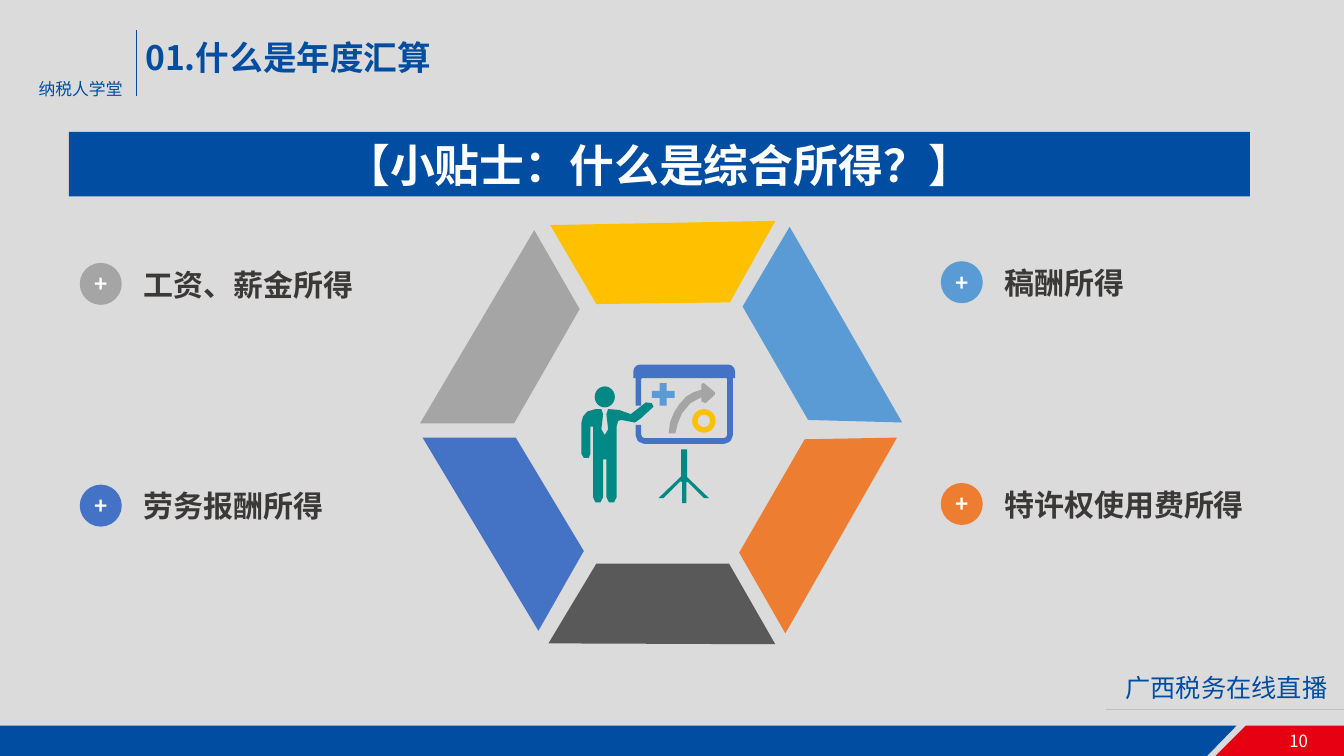
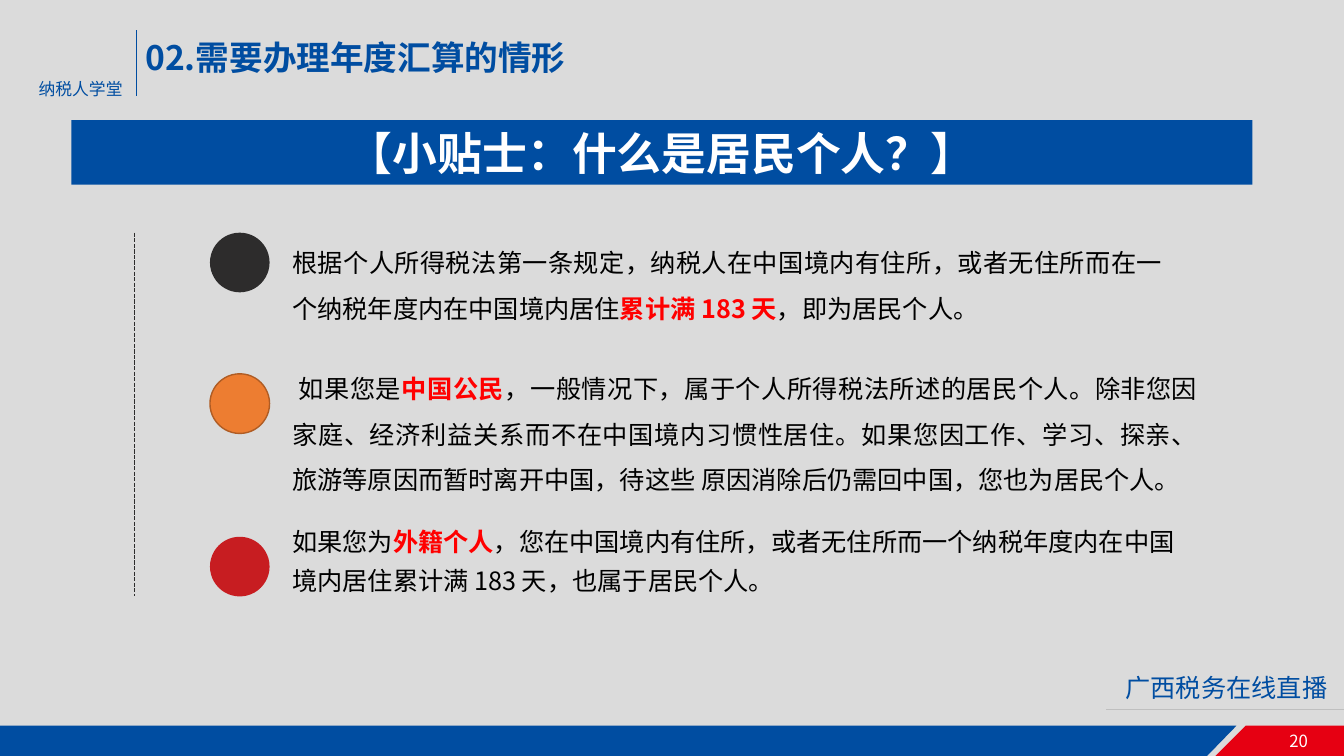
from lxml import etree
from pptx import Presentation
from pptx.dml.color import RGBColor as RGB
from pptx.enum.dml import MSO_LINE
from pptx.enum.shapes import MSO_CONNECTOR, MSO_SHAPE as SHAPE
from pptx.enum.text import MSO_ANCHOR as ANCHOR, PP_ALIGN as ALIGN
from pptx.oxml.ns import qn
from pptx.util import Inches, Pt

FONT = "Noto Sans CJK SC"
PAPER = RGB(0xDB, 0xDB, 0xDB)
NAVY = RGB(0x00, 0x4D, 0xA1)
BRIGHT_RED = RGB(0xE6, 0x00, 0x12)
RULE_GREY = RGB(0xBF, 0xBF, 0xBF)
WHITE = RGB(0xFF, 0xFF, 0xFF)
BLACK = RGB(0x00, 0x00, 0x00)
INK = RGB(0x3B, 0x38, 0x38)
CHARCOAL = RGB(0x2D, 0x2C, 0x2C)
SLATE = RGB(0x59, 0x59, 0x59)
GREY = RGB(0xA5, 0xA5, 0xA5)
YELLOW = RGB(0xFF, 0xC0, 0x00)
SKY = RGB(0x5B, 0x9B, 0xD5)
ORANGE = RGB(0xED, 0x7D, 0x31)
BROWN = RGB(0xAF, 0x5C, 0x24)
BLUE = RGB(0x44, 0x72, 0xC4)
TEAL = RGB(0x02, 0x89, 0x85)
CRIMSON = RGB(0xC7, 0x1D, 0x21)
MARK = RGB(0xFF, 0x00, 0x00)

prs = Presentation()
prs.slide_width, prs.slide_height = Inches(13.33), Inches(7.5)
# The slide is a grid of 160 columns and 90 rows
COL, ROW = prs.slide_width / 160, prs.slide_height / 90
prs.slide_master.background.fill.solid()
prs.slide_master.background.fill.fore_color.rgb = PAPER


def add_box(s, x, y, w, h, runs=(), size=18, kind=None, fill=None,
            align=ALIGN.LEFT, anchor=ANCHOR.TOP, inset=(1.2, 0.6), spacing=None):
    """Add a text box, or a filled shape when kind is given; runs are (text, colour, bold)."""
    place = int(x * COL), int(y * ROW), int(w * COL), int(h * ROW)
    if kind is None:
        sp = s.shapes.add_textbox(*place)
    else:
        sp = s.shapes.add_shape(kind, *place)
        sp.shadow.inherit = False
        sp.fill.solid()
        sp.fill.fore_color.rgb = fill
        sp.line.fill.background()
    tf = sp.text_frame
    tf.word_wrap = True
    tf.vertical_anchor = anchor
    tf.margin_left = tf.margin_right = int(inset[0] * COL)
    tf.margin_top = tf.margin_bottom = int(inset[1] * ROW)
    p = tf.paragraphs[0]
    p.alignment = align
    if spacing:
        p.line_spacing = spacing
    for text, color, bold in runs:
        r = p.add_run()
        r.text = text
        r.font.name, r.font.size, r.font.bold = FONT, Pt(size), bold
        r.font.color.rgb = color
        etree.SubElement(r.font._element, qn("a:ea")).set("typeface", FONT)
    return sp


def add_outline(s, points, color, stroke=None):
    """Add a filled polygon, or an open line when stroke gives its width."""
    pts = [(x * COL, y * ROW) for x, y in points]
    pen = s.shapes.build_freeform(*pts[0])
    pen.add_line_segments(pts[1:], close=stroke is None)
    sp = pen.convert_to_shape()
    sp.shadow.inherit = False
    if stroke:
        sp.fill.background()
        sp.line.color.rgb = color
        sp.line.width = Pt(stroke)
    else:
        sp.fill.solid()
        sp.fill.fore_color.rgb = color
        sp.line.fill.background()


# Frame of every slide: footer band, header, banner
FOOT = 86.4
slides, lines = [], []
for number, title, banner, bx, by in [
    ("10", "01.什么是年度汇算", "【小贴士：什么是综合所得？】", 8.2, 15.7),
    ("20", "02.需要办理年度汇算的情形", "【小贴士：什么是居民个人？】", 8.5, 14.3),
]:
    s = prs.slides.add_slide(prs.slide_layouts[6])
    slides.append(s)
    add_outline(s, [(0, FOOT), (147.2, FOOT), (143.7, 90), (0, 90)], NAVY)
    add_outline(s, [(148.3, FOOT), (160, FOOT), (160, 90), (144.7, 90)], BRIGHT_RED)
    add_box(s, 152.3, FOOT, 6.5, 3.6, [(number, WHITE, False)], 12)
    add_box(s, 3.4, 8.8, 13, 3.6, [("纳税人学堂", NAVY, False)], 12)
    add_box(s, 132.8, 79.4, 27.2, 4.8, [("广西税务在线直播", NAVY, False)], 18)
    add_box(s, 16.1, 3.8, 90, 6, [(title, NAVY, True)], 24)
    add_box(s, bx, by, 140.6, 7.7, [(banner, WHITE, True)], 32, SHAPE.RECTANGLE, NAVY,
            ALIGN.CENTER, ANCHOR.MIDDLE, (0, 0))
    lines += [(s, 16.2, 3.6, 16.2, 11.4, NAVY, 0.5, None),
              (s, 131.7, 84.4, 160, 84.4, RULE_GREY, 0.5, None)]

income, resident = slides

# Hexagon ring
for color, points in [
    (GREY, [(63.6, 27.4), (50, 50.4), (61.2, 50.4), (69, 36.8)]),
    (YELLOW, [(92.3, 26.3), (65.5, 26.8), (71, 36.2), (86.9, 36)]),
    (SKY, [(107.4, 50.3), (94, 27), (88.4, 36.5), (96.2, 50)]),
    (ORANGE, [(93.5, 75.4), (106.8, 52.1), (95.8, 52.3), (88, 65.8)]),
    (SLATE, [(65.3, 76.6), (92.3, 76.7), (86.8, 67.1), (71, 67.1)]),
    (BLUE, [(50.3, 52.1), (64.1, 75.1), (69.5, 65.6), (61.4, 52.1)]),
]:
    add_outline(income, points, color)

# Presenter: head, then body with tie, arms and legs
add_box(income, 70.8, 46, 2.4, 2.5, kind=SHAPE.OVAL, fill=TEAL)
add_outline(income, [
    (77.6, 48), (76.9, 47.9), (75.1, 49.3), (73.7, 48.8), (72.4, 48.7),
    (72.2, 49.3), (72.4, 51.1), (72, 51.8), (71.6, 51.1), (71.8, 49.3), (71.6, 48.7),
    (70.9, 48.7), (69.9, 49), (69.4, 49.6), (69.2, 50.4), (69.2, 54), (69.5, 54.5),
    (70.1, 54.5), (70.3, 54), (70.3, 50.8), (70.6, 50.8), (70.6, 59.2), (70.9, 59.8),
    (71.5, 59.8), (71.8, 59.2), (71.8, 54.7), (72.2, 54.7), (72.2, 59.2), (72.5, 59.8),
    (73.1, 59.8), (73.4, 59.2), (73.4, 50.8), (73.6, 50.1), (74, 50), (75.6, 50.3),
    (76.3, 49.8), (77.5, 48.7), (77.8, 48.4)], TEAL)

# Board: frame, top bar, tripod and the signs on it
add_outline(income, [
    (76, 48.3), (76, 45), (76.6, 44.3), (86.3, 44.3), (86.9, 45), (86.9, 51.8),
    (86.7, 52.3), (86.2, 52.5), (76.7, 52.5), (76.2, 52.3), (76, 51.8), (76, 50.6)],
    BLUE, 4)
bar = add_box(income, 75.4, 43.4, 12.1, 1.6, kind=SHAPE.ROUND_2_SAME_RECTANGLE, fill=BLUE)
bar.adjustments[0] = 0.5
add_outline(income, [
    (84.4, 59.3), (81.8, 56.8), (81.8, 53.5), (81.1, 53.5), (81.1, 56.7), (78.4, 59.3),
    (79, 59.3), (81, 57.3), (81.2, 57.4), (81.2, 59.9), (81.7, 59.9), (81.7, 57.4),
    (81.9, 57.4), (83.8, 59.3)], TEAL)
add_outline(income, [
    (79.6, 51.6), (79.8, 50.2), (80.3, 49), (80.9, 48.1), (81.7, 47.2), (82.6, 46.7),
    (83.5, 46.4), (83.5, 45.7), (83.8, 45.6), (85.1, 46.7), (85.1, 47), (84, 48),
    (83.5, 47.8), (83.5, 47.3), (82.2, 48), (81.2, 49.2), (80.7, 50.4), (80.4, 51.6)], GREY)
plus = add_box(income, 77.6, 45.6, 2.7, 2.7, kind=SHAPE.CROSS, fill=SKY)
plus.adjustments[0] = 0.35
ring = add_box(income, 82.4, 48.7, 2.8, 2.8, kind=SHAPE.DONUT, fill=YELLOW)
ring.adjustments[0] = 0.23

# Four kinds of income, two columns by two rows
for i, (text, color) in enumerate([("工资、薪金所得", GREY), ("稿酬所得", SKY),
                                   ("劳务报酬所得", BLUE), ("特许权使用费所得", ORANGE)]):
    row, col = divmod(i, 2)
    x, y = 9.5 + 102.5 * col, 31.3 + 26.4 * row - 0.2 * col
    add_box(income, x, y, 5, 5, [("+", WHITE, True)], 16, SHAPE.OVAL, color,
            ALIGN.CENTER, ANCHOR.MIDDLE, (0, 0))
    add_box(income, x + 6.4, y - 0.2, 35.6, 5.5, [(text, INK, True)], 21.4)

# Who is a resident: dots and paragraphs
for dot_y, color, edge, y, w, h, align, spacing, runs in [
    (27.7, CHARCOAL, None, 27.7, 103.6, 10.9, ALIGN.JUSTIFY, 1.5, [
        ("根据个人所得税法第一条规定，纳税人在中国境内有住所，或者无住所而在一个纳税年度内在中国境内居住",
         BLACK, False),
        ("累计满 183 天", MARK, True),
        ("，即为居民个人。", BLACK, False)]),
    (44.5, ORANGE, BROWN, 42.7, 107.8, 16.4, ALIGN.JUSTIFY, 1.5, [
        (" 如果您是", BLACK, False),
        ("中国公民", MARK, True),
        ("，一般情况下，属于个人所得税法所述的居民个人。除非您因家庭、经济利益关系而不在中国境内习惯性居住。"
         "如果您因工作、学习、探亲、旅游等原因而暂时离开中国，待这些 原因消除后仍需回中国，您也为居民个人。",
         BLACK, False)]),
    (63.9, CRIMSON, None, 61.6, 107.8, 11.2, ALIGN.LEFT, 1.3, [
        ("如果您为", BLACK, False),
        ("外籍个人", MARK, True),
        ("，您在中国境内有住所，或者无住所而一个纳税年度内在中国境内居住累计满 183 天，也属于居民个人。",
         BLACK, False)]),
]:
    dot = add_box(resident, 25, dot_y, 7.1, 7.1, kind=SHAPE.OVAL, fill=color)
    if edge:
        dot.line.color.rgb = edge
        dot.line.width = Pt(1)
    add_box(resident, 34.8, y, w, h, runs, align=align, inset=(0, 0), spacing=spacing)
lines.append((resident, 16, 27.7, 16, 71, CHARCOAL, 1, MSO_LINE.SQUARE_DOT))

# Straight lines
for s, x1, y1, x2, y2, color, width, dash in lines:
    cx = s.shapes.add_connector(MSO_CONNECTOR.STRAIGHT, int(x1 * COL), int(y1 * ROW),
                                int(x2 * COL), int(y2 * ROW))
    cx.line.color.rgb = color
    cx.line.width = Pt(width)
    if dash:
        cx.line.dash_style = dash
    etree.SubElement(cx._element.spPr, qn("a:effectLst"))

prs.save("out.pptx")
